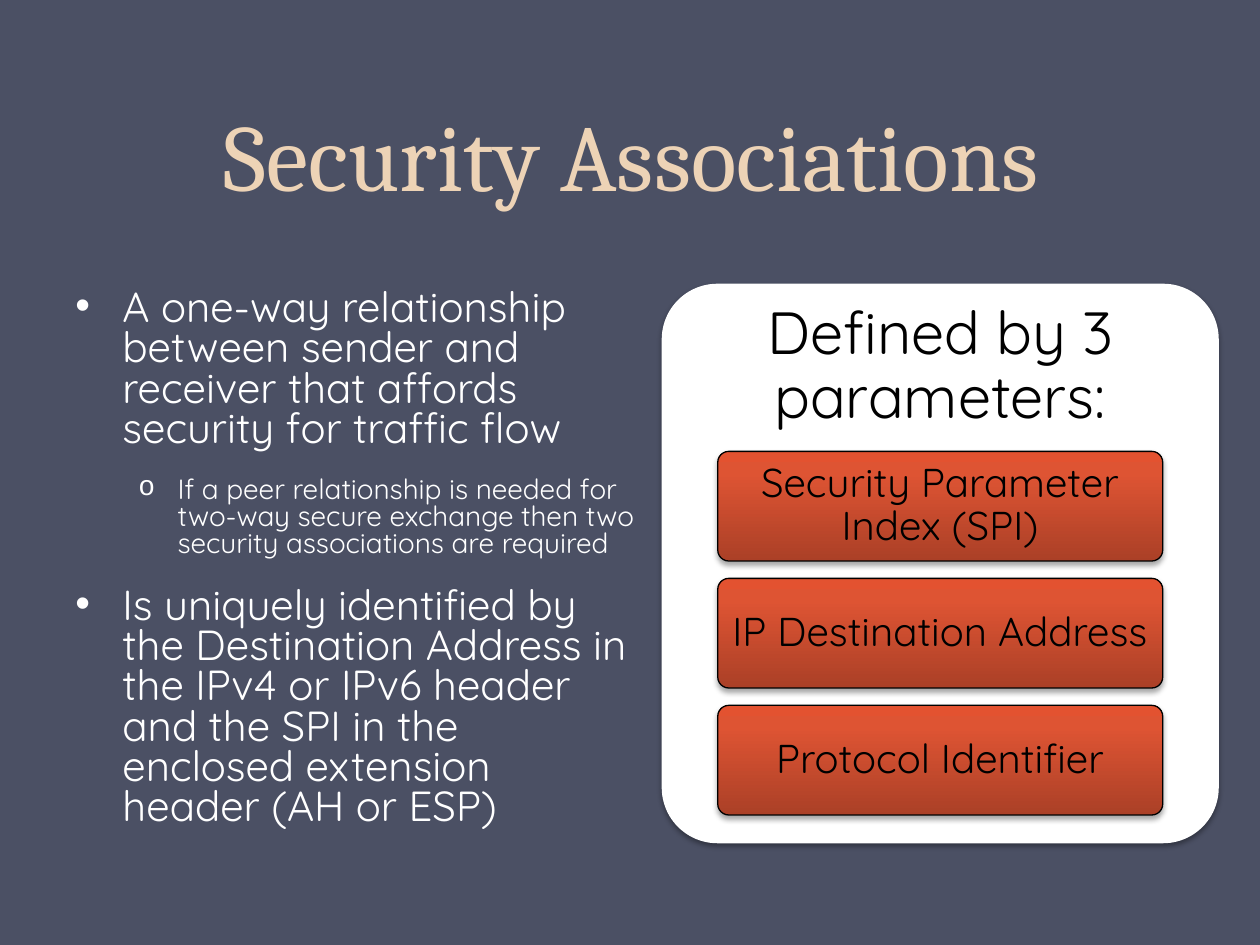
from lxml.etree import SubElement
from pptx import Presentation
from pptx.dml.color import RGBColor
from pptx.enum.shapes import MSO_SHAPE
from pptx.enum.text import MSO_ANCHOR, PP_ALIGN
from pptx.oxml.ns import qn
from pptx.util import Cm, Pt

TITLE = "Security Associations"
BULLETS = [  # level, text
    (0, "A one-way relationship between sender and receiver that affords "
        "security for traffic flow"),
    (1, "If a peer relationship is needed for two-way secure exchange then "
        "two security associations are required"),
    (0, "Is uniquely identified by the Destination Address in the IPv4 or "
        "IPv6 header and the SPI in the enclosed extension header (AH or ESP)"),
]
LEVELS = [  # bullet sign, text size, left margin and hanging indent in cm
    dict(sign="•", size=24, margin=0.95, hang=0.95),
    dict(sign="o", size=16, margin=2.06, hang=0.79),
]
HEADING = "Defined by 3 parameters:"
PARAMETERS = ["Security Parameter Index (SPI)", "IP Destination Address",
              "Protocol Identifier"]
COLORS = dict(back="4B5064", title="EDD3B6", light="FFFFFF", dark="000000")
GRADIENT = [(0, "AB4027"), (80, "DE5433"), (100, "E35230")]

PANEL = (13.34, 5.72, 11.23, 11.28)
HEADING_H = 3.38
BAR_W, BAR_H, BAR_STEP = 8.97, 2.21, 2.56


def rgb(name):
    return RGBColor.from_string(COLORS[name])


def add_text(tf, text, size, color="dark", font="Quicksand", align=PP_ALIGN.CENTER,
             spacing=0.9, before=0, after=0, first=True):
    p = tf.paragraphs[0] if first else tf.add_paragraph()
    p.alignment, p.line_spacing = align, spacing
    p.space_before, p.space_after = Pt(before), Pt(after)
    r = p.add_run()
    r.text = text
    r.font.size, r.font.name = Pt(size), font
    r.font.color.rgb = rgb(color)
    return p


def set_frame(tf, anchor, inset_x=0.25, inset_y=0.13):
    tf.word_wrap = True
    tf.vertical_anchor = anchor
    tf.margin_left = tf.margin_right = Cm(inset_x)
    tf.margin_top = tf.margin_bottom = Cm(inset_y)
    return tf


def add_box(s, box, anchor, **insets):
    return set_frame(s.shapes.add_textbox(*map(Cm, box)).text_frame, anchor, **insets)


def add_bullet(p, sign, margin, hang):
    pPr = p._p.get_or_add_pPr()
    pPr.set("marL", str(Cm(margin)))
    pPr.set("indent", str(-Cm(hang)))
    SubElement(pPr, qn("a:buFont"), typeface="Arial" if sign == "•" else "Courier New")
    SubElement(pPr, qn("a:buChar"), char=sign)


def add_color(parent, value):
    return SubElement(parent, qn("a:srgbClr"), val=value)


def add_card(s, box):
    """Add a rounded rectangle with a soft shadow below it."""
    sp = s.shapes.add_shape(MSO_SHAPE.ROUNDED_RECTANGLE, *map(Cm, box))
    sp.adjustments[0] = 0.1
    sp.fill.solid()
    sp.fill.fore_color.rgb = rgb("light")
    sp.line.fill.background()
    sp.shadow.inherit = False
    effects = sp._element.spPr.find(qn("a:effectLst"))
    shadow = SubElement(effects, qn("a:outerShdw"), blurRad=str(Pt(3.1)),
                        dist=str(Pt(1.8)), dir="5400000", rotWithShape="0")
    SubElement(add_color(shadow, COLORS["dark"]), qn("a:alpha"), val="35000")
    return sp


def fill_gradient(sp):
    sp.fill.gradient()
    sp.fill.gradient_angle = 90
    stops = sp._element.spPr.find(qn("a:gradFill")).find(qn("a:gsLst"))
    for old in list(stops):
        stops.remove(old)
    for position, value in GRADIENT:
        add_color(SubElement(stops, qn("a:gs"), pos=str(position * 1000)), value)


def main():
    prs = Presentation()
    prs.slide_width, prs.slide_height = Cm(25.4), Cm(19.05)
    s = prs.slides.add_slide(prs.slide_layouts[6])
    s.background.fill.solid()
    s.background.fill.fore_color.rgb = rgb("back")

    tf = add_box(s, (1.3, -0.08, 22.86, 4.45), MSO_ANCHOR.BOTTOM)
    add_text(tf, TITLE, 54, color="title", font="Cambria", spacing=Pt(58))

    tf = add_box(s, (1.27, 5.72, 11.86, 12.07), MSO_ANCHOR.TOP)
    for i, (level, text) in enumerate(BULLETS):
        style = LEVELS[level]
        p = add_text(tf, text, style["size"], color="light", align=PP_ALIGN.LEFT,
                     spacing=0.8, before=0.2 * style["size"], after=12, first=i == 0)
        p.level = level
        add_bullet(p, style["sign"], style["margin"], style["hang"])

    left, top, width, _ = PANEL
    add_card(s, PANEL)
    tf = add_box(s, (left, top, width, HEADING_H), MSO_ANCHOR.MIDDLE,
                 inset_x=0.36, inset_y=0.36)
    add_text(tf, HEADING, 34)

    bar_left = left + (width - BAR_W) / 2
    for i, text in enumerate(PARAMETERS):
        sp = add_card(s, (bar_left, top + HEADING_H + i * BAR_STEP, BAR_W, BAR_H))
        fill_gradient(sp)
        sp.line.color.rgb = rgb("dark")
        sp.line.width = Pt(0.75)
        add_text(set_frame(sp.text_frame, MSO_ANCHOR.MIDDLE, inset_x=0.15), text, 23)

    prs.save("out.pptx")


if __name__ == "__main__":
    main()
